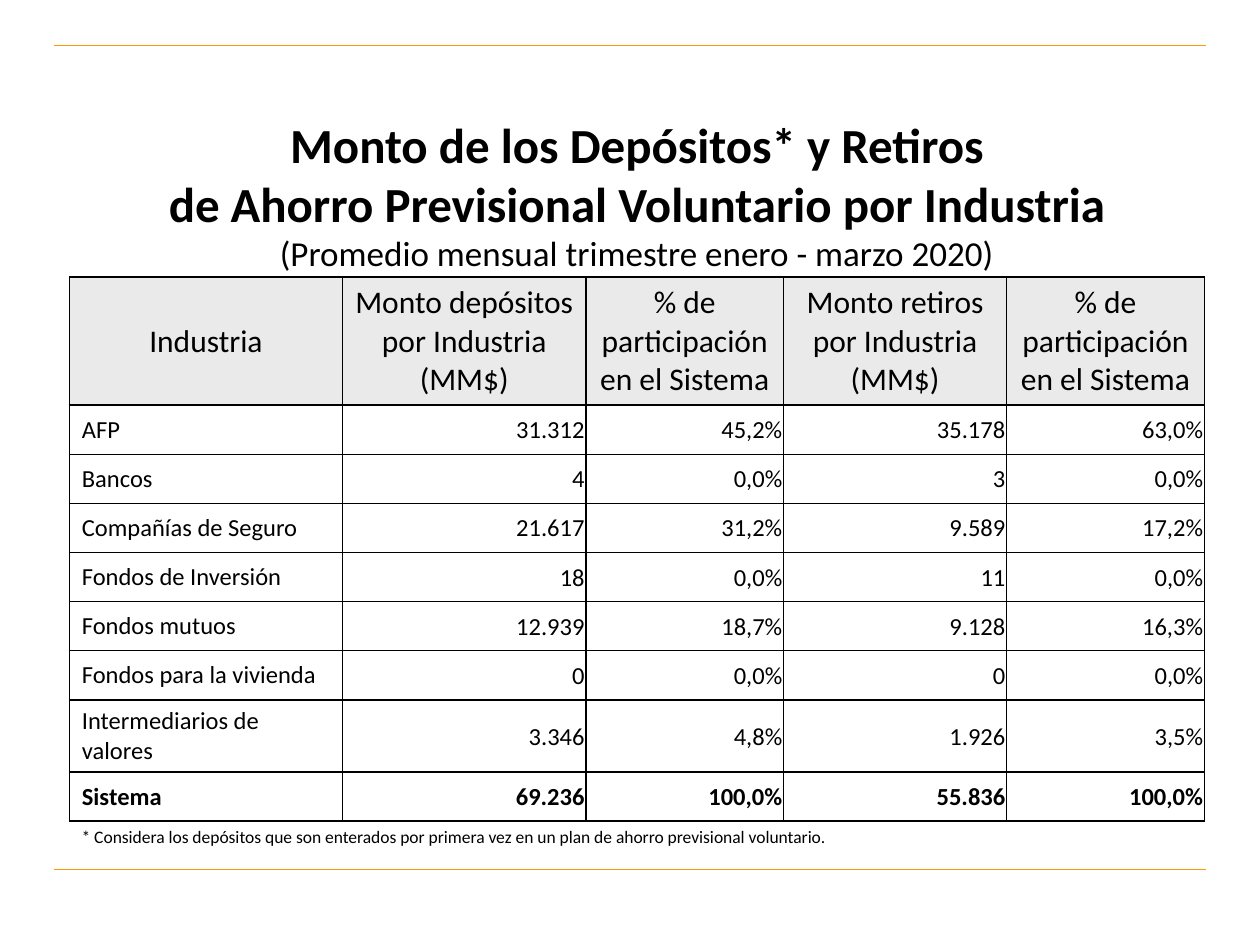
from dataclasses import dataclass
from typing import NamedTuple

from lxml.etree import SubElement
from pptx import Presentation
from pptx.dml.color import RGBColor
from pptx.enum.shapes import MSO_CONNECTOR
from pptx.enum.text import MSO_ANCHOR, MSO_AUTO_SIZE, PP_ALIGN
from pptx.oxml.ns import qn
from pptx.util import Inches, Pt


@dataclass(frozen=True)
class Theme:
    font: str = "Calibri"
    ink: str = "000000"
    rule: str = "FF9900"
    head: str = "EAEAEA"
    paper: str = "FFFFFF"
    title: int = 28
    sub: int = 20
    label: int = 18
    body: int = 14
    note: int = 10


class Row(NamedTuple):
    name: str
    paid: str
    share: str
    drawn: str
    part: str


class Look(NamedTuple):
    size: int
    fill: str
    align: PP_ALIGN
    pad: tuple
    bold: bool = False


THEME = Theme()
WIDE = (0.1, 0.05, 0.1, 0.05)
TIGHT = (0.01, 0.01, 0.01, 0)
WIDTHS = (2.17, 1.93, 1.57, 1.77, 1.57)
SHARE = "% de\nparticipación en el Sistema"
HEAD = Row(
    "Industria",
    "Monto depósitos por Industria (MM$)",
    SHARE,
    "Monto retiros\npor Industria (MM$)",
    SHARE,
)
ROWS = (
    Row("AFP", "31.312", "45,2%", "35.178", "63,0%"),
    Row("Bancos", "4", "0,0%", "3", "0,0%"),
    Row("Compañías de Seguro", "21.617", "31,2%", "9.589", "17,2%"),
    Row("Fondos de Inversión", "18", "0,0%", "11", "0,0%"),
    Row("Fondos mutuos", "12.939", "18,7%", "9.128", "16,3%"),
    Row("Fondos para la vivienda", "0", "0,0%", "0", "0,0%"),
    Row("Intermediarios de valores", "3.346", "4,8%", "1.926", "3,5%"),
    Row("Sistema", "69.236", "100,0%", "55.836", "100,0%"),
)
TITLE = (
    "Monto de los Depósitos* y Retiros",
    "de Ahorro Previsional Voluntario por Industria",
    "(Promedio mensual trimestre enero - marzo 2020)",
)
NOTE = (
    "* Considera los depósitos que son enterados por primera vez "
    "en un plan de ahorro previsional voluntario."
)


def style(para, size: int, align: PP_ALIGN, bold: bool = False) -> None:
    para.alignment = align
    for run in para.runs:
        font = run.font
        font.name, font.size, font.bold = THEME.font, Pt(size), bold
        font.color.rgb = RGBColor.from_string(THEME.ink)


def draw_rule(slide, top: float) -> None:
    line = slide.shapes.add_connector(
        MSO_CONNECTOR.STRAIGHT, Inches(0.43), Inches(top), Inches(9.57), Inches(top)
    )
    line.line.color.rgb = RGBColor.from_string(THEME.rule)
    line.line.width = Pt(0.75)
    SubElement(line.element.spPr, qn("a:effectLst"))


def draw_title(slide) -> None:
    title = slide.shapes.title
    title.left, title.top = Inches(0.41), Inches(0.99)
    title.width, title.height = Inches(9.29), Inches(1.1)
    frame = title.text_frame
    frame.text = "\n".join(TITLE)
    frame.word_wrap = True
    frame.auto_size = MSO_AUTO_SIZE.NONE
    frame.vertical_anchor = MSO_ANCHOR.MIDDLE
    sizes = (THEME.title, THEME.title, THEME.sub)
    for para, size in zip(frame.paragraphs, sizes):
        style(para, size, PP_ALIGN.CENTER, size == THEME.title)


def add_edges(cell) -> None:
    props = cell._tc.get_or_add_tcPr()
    for side in ("lnL", "lnR", "lnT", "lnB"):
        edge = SubElement(props, qn(f"a:{side}"), w=str(Pt(1)))
        fill = SubElement(edge, qn("a:solidFill"))
        SubElement(fill, qn("a:srgbClr"), val=THEME.ink)


def fill_cell(cell, text: str, look: Look) -> None:
    add_edges(cell)
    cell.fill.solid()
    cell.fill.fore_color.rgb = RGBColor.from_string(look.fill)
    cell.vertical_anchor = MSO_ANCHOR.MIDDLE
    pads = [Inches(pad) for pad in look.pad]
    cell.margin_left, cell.margin_top, cell.margin_right, cell.margin_bottom = pads
    cell.text_frame.text = text
    for para in cell.text_frame.paragraphs:
        style(para, look.size, look.align, look.bold)


def pick_look(row: int, col: int) -> Look:
    if row == 0:
        return Look(THEME.label, THEME.head, PP_ALIGN.CENTER, WIDE)
    bold = row == len(ROWS)
    if col == 0:
        return Look(THEME.body, THEME.paper, PP_ALIGN.LEFT, WIDE, bold)
    return Look(THEME.body, THEME.paper, PP_ALIGN.RIGHT, TIGHT, bold)


def draw_table(slide) -> None:
    data = (HEAD, *ROWS)
    table = slide.shapes.add_table(
        len(data), len(WIDTHS), Inches(0.55), Inches(2.2), Inches(9.02), Inches(4.04)
    ).table
    table.first_row = table.horz_banding = False
    for col, width in zip(table.columns, WIDTHS):
        col.width = Inches(width)
    for i, row in enumerate(data):
        table.rows[i].height = Inches(0.39 if i else 0.92)
        for j, text in enumerate(row):
            fill_cell(table.cell(i, j), text, pick_look(i, j))


def draw_note(slide) -> None:
    box = slide.shapes.add_textbox(Inches(0.55), Inches(6.51), Inches(6.2), Inches(0.44))
    frame = box.text_frame
    frame.text = NOTE
    frame.word_wrap = False
    frame.auto_size = MSO_AUTO_SIZE.SHAPE_TO_FIT_TEXT
    style(frame.paragraphs[0], THEME.note, PP_ALIGN.LEFT)


def main() -> None:
    deck = Presentation()
    deck.slide_width, deck.slide_height = Inches(10), Inches(7.5)
    slide = deck.slides.add_slide(deck.slide_layouts[5])
    for top in (0.36, 6.9):
        draw_rule(slide, top)
    draw_title(slide)
    draw_table(slide)
    draw_note(slide)
    deck.save("out.pptx")


if __name__ == "__main__":
    main()
